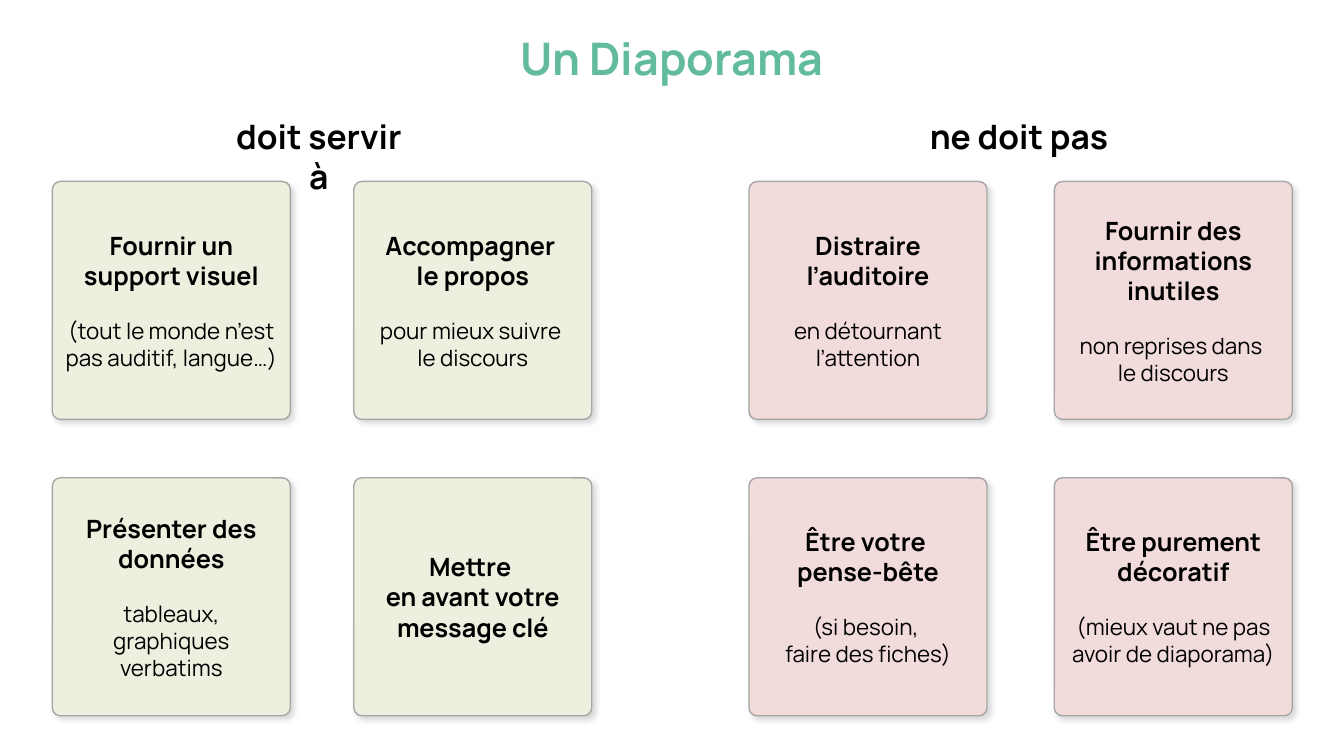
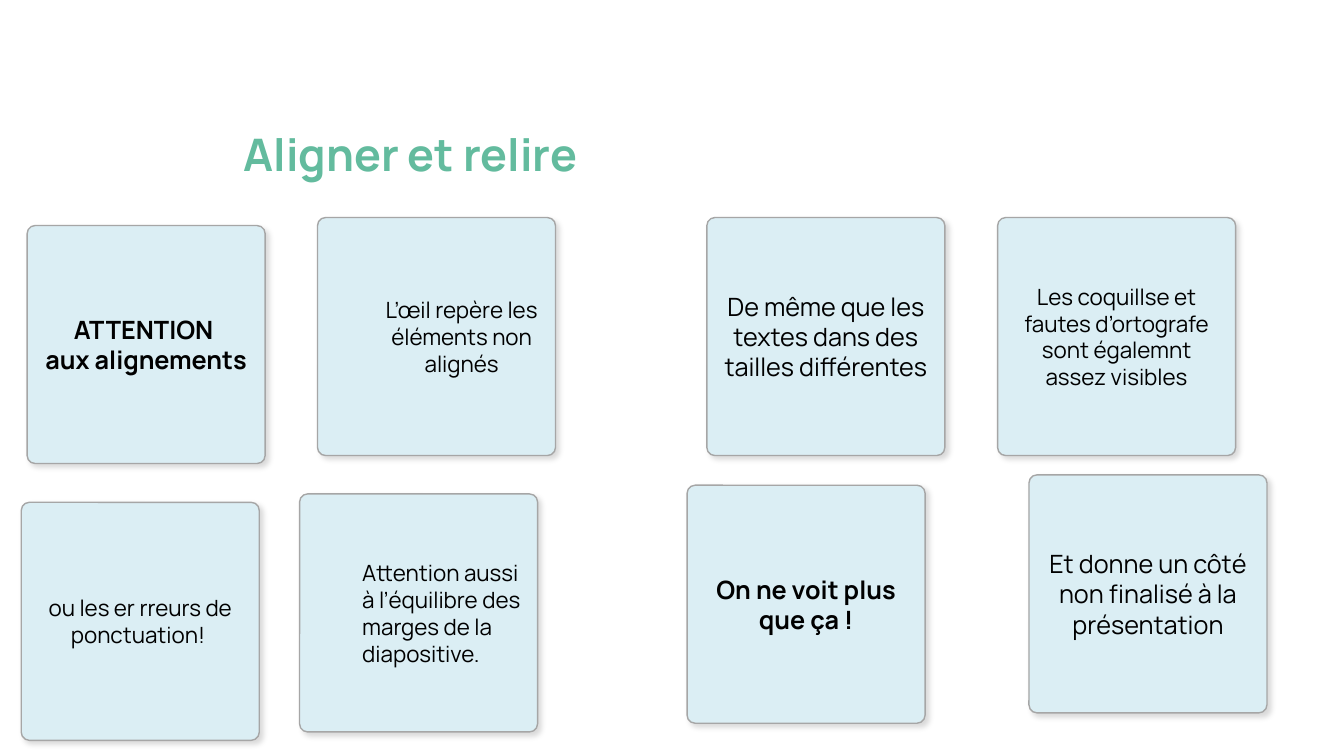
"""Build two slides of advice cards about slide decks."""
from copy import deepcopy
from dataclasses import dataclass

from lxml import etree
from pptx import Presentation
from pptx.dml.color import RGBColor
from pptx.enum import shapes, text
from pptx.oxml import ns
from pptx.util import Pt


@dataclass(frozen=True)
class Theme:
    font: str = "Manrope"
    ink: str = "000000"
    accent: str = "63BB9E"
    outline: str = "A6A6A6"
    green: str = "EBF1DE"
    red: str = "F2DCDB"
    blue: str = "DBEEF4"
    title: int = 32
    heading: int = 24
    strong: int = 18
    body: int = 16
    card: int = 170
    radius: float = 0.034
    gap: int = 19
    indent: int = 36


THEME = Theme()
CENTER, LEFT = text.PP_ALIGN.CENTER, text.PP_ALIGN.LEFT
STRONG = dict(size=THEME.strong, bold=True)
LARGE = dict(size=THEME.strong)
BODY = dict(size=THEME.body)
DETAIL = dict(size=THEME.body, before=THEME.gap)
INDENTED = dict(size=THEME.body, indent=THEME.indent)

PURPOSE_TITLE = ("Un Diaporama", 480, 18.7, 236)
PURPOSE_ROWS = (129.6, 341.3)
PURPOSE_GROUPS = [
    dict(heading="doit servir à", center=227.8, fill=THEME.green, columns=(37.4, 252.7), cards=[
        ("Fournir un support visuel", "(tout le monde n’est pas auditif, langue…)"),
        ("Accompagner \vle propos", "pour mieux suivre \vle discours"),
        ("Présenter des données", "tableaux, graphiques verbatims"),
        ("Mettre \ven avant votre message clé",),
    ]),
    dict(heading="ne doit pas", center=727.9, fill=THEME.red, columns=(535, 753.1), cards=[
        ("Distraire l’auditoire", "en détournant l’attention"),
        ("Fournir des informations inutiles", "non reprises dans \vle discours"),
        ("Être votre \vpense-bête", "(si besoin, \vfaire des fiches)"),
        ("Être purement décoratif", "(mieux vaut ne pas avoir de diaporama)"),
    ]),
]

ALIGN_TITLE = ("Aligner et relire", 293.4, 87.1, 256)
ALIGN_CARDS = [
    (19.4, 161.1, [("ATTENTION ", STRONG), ("aux alignements", STRONG)]),
    (226.8, 155.4, [("L’œil repère les éléments non alignés", INDENTED)]),
    (15.2, 358.8, [("ou les er rreurs de ponctuation! ", BODY)]),
    (504.9, 155.4, [("De même que les textes dans des tailles différentes", LARGE)]),
    (712.6, 155.4, [("Les coquillse et fautes d’ortografe sont égalemnt assez visibles", BODY)]),
    (490.8, 346.6, [("On ne voit plus que ça !", STRONG)]),
    (214, 352.8, [("Attention aussi à l’équilibre des marges de la diapositive.",
                   INDENTED | dict(align=LEFT))]),
    (735, 339.2, [("Et donne un côté non finalisé à la présentation", LARGE)]),
]


def rgb(value):
    return RGBColor.from_string(value)


def write(para, words, *, size, bold=False, color=THEME.ink, align=CENTER, before=0, indent=0):
    para.text = words
    para.alignment = align
    para.space_before = Pt(before)
    if indent:
        para.level = 1
        properties = para._p.get_or_add_pPr()
        properties.set("marL", str(Pt(indent)))
        properties.set("indent", "0")
    for span in para.runs:
        span.font.name = THEME.font
        span.font.size = Pt(size)
        span.font.bold = bold
        span.font.color.rgb = rgb(color)
    for line_break in para._p.findall(ns.qn("a:br")):
        line_break.insert(0, deepcopy(para.runs[0]._r.rPr))


def add_label(page, words, center, top, width, height, **style):
    box = page.shapes.add_textbox(Pt(center - width / 2), Pt(top), Pt(width), Pt(height))
    box.text_frame.word_wrap = True
    write(box.text_frame.paragraphs[0], words, bold=True, **style)


def add_title(page, words, center, top, width):
    add_label(page, words, center, top, width, 46, size=THEME.title, color=THEME.accent)


def add_shadow(box):
    box.shadow.inherit = False
    effects = box._element.spPr.find(ns.qn("a:effectLst"))
    shadow = etree.SubElement(effects, ns.qn("a:outerShdw"), blurRad=str(Pt(4)), dist=str(Pt(3)),
                              dir="2700000", algn="tl", rotWithShape="0")
    color = etree.SubElement(shadow, ns.qn("a:srgbClr"), val=THEME.ink)
    etree.SubElement(color, ns.qn("a:alpha"), val="14000")


def add_card(page, left, top, fill, lines):
    box = page.shapes.add_shape(shapes.MSO_SHAPE.ROUNDED_RECTANGLE,
                                Pt(left), Pt(top), Pt(THEME.card), Pt(THEME.card))
    box.adjustments[0] = THEME.radius
    box.fill.solid()
    box.fill.fore_color.rgb = rgb(fill)
    box.line.color.rgb = rgb(THEME.outline)
    box.line.width = Pt(1)
    add_shadow(box)
    frame = box.text_frame
    frame.word_wrap = True
    frame.vertical_anchor = text.MSO_ANCHOR.MIDDLE
    for index, (words, style) in enumerate(lines):
        para = frame.add_paragraph() if index else frame.paragraphs[0]
        write(para, words, **style)


def build_purpose(page):
    for group in PURPOSE_GROUPS:
        for index, card in enumerate(group["cards"]):
            row, column = divmod(index, 2)
            add_card(page, group["columns"][column], PURPOSE_ROWS[row], group["fill"],
                     list(zip(card, (STRONG, DETAIL))))
        add_label(page, group["heading"], group["center"], 79.2, 150, 36, size=THEME.heading)
    add_title(page, *PURPOSE_TITLE)


def build_alignment(page):
    for left, top, lines in ALIGN_CARDS:
        add_card(page, left, top, THEME.blue, lines)
    add_title(page, *ALIGN_TITLE)


def main():
    deck = Presentation()
    deck.slide_width, deck.slide_height = Pt(960), Pt(540)
    for build in (build_purpose, build_alignment):
        build(deck.slides.add_slide(deck.slide_layouts[6]))
    deck.save("out.pptx")


if __name__ == "__main__":
    main()
